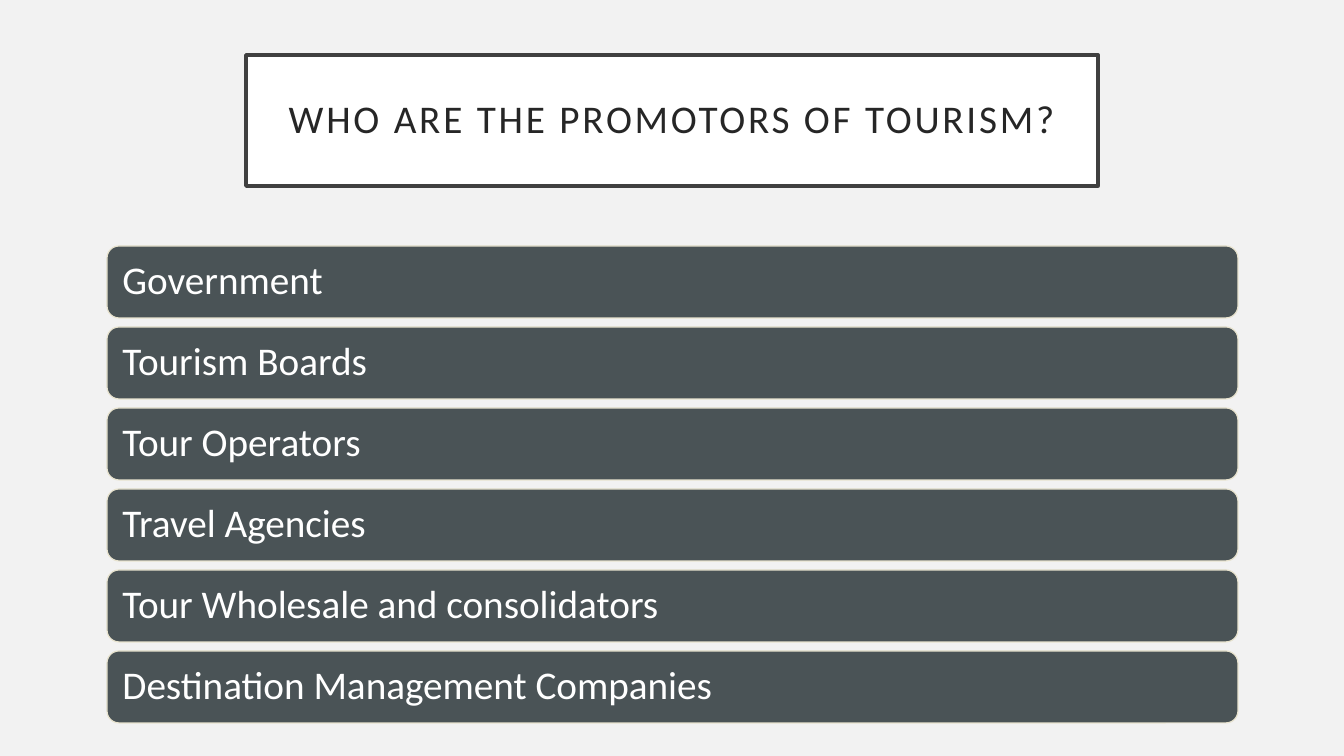
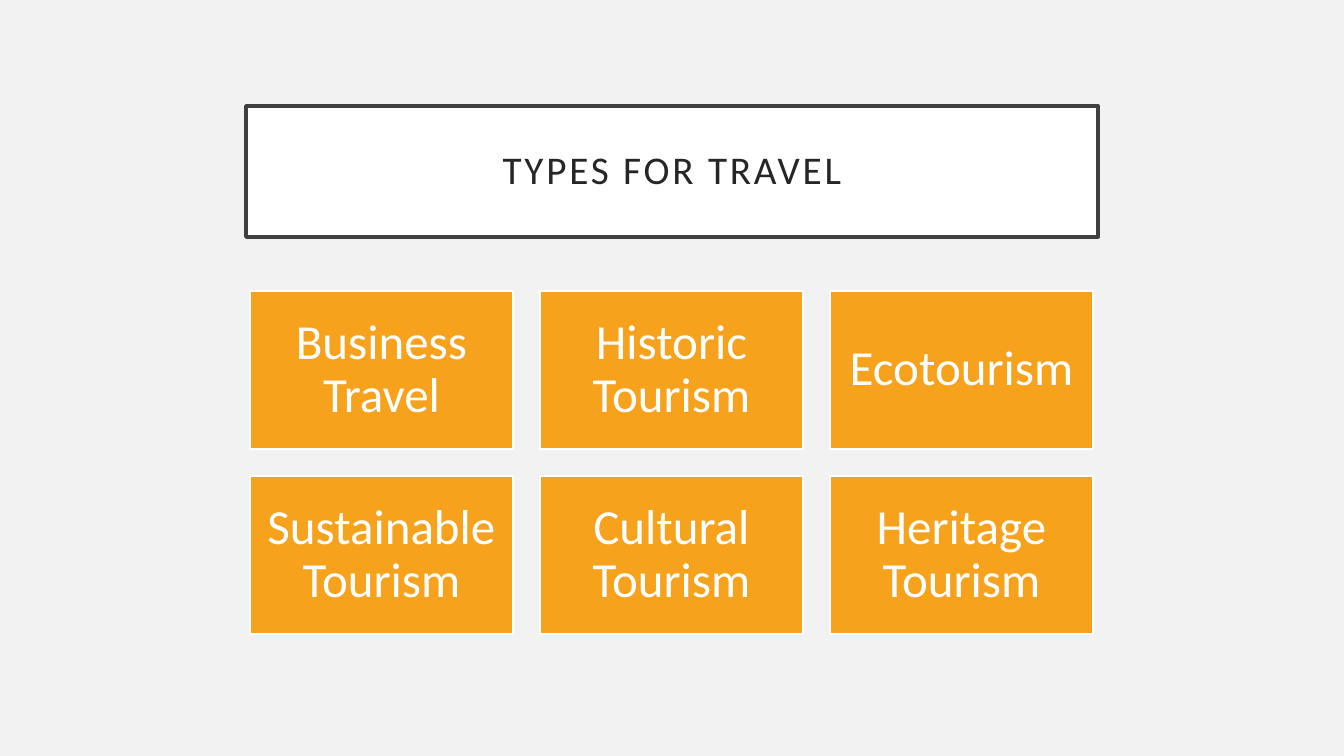
from pptx import Presentation
from pptx.dml.color import RGBColor
from pptx.enum.shapes import MSO_SHAPE
from pptx.enum.text import MSO_ANCHOR, PP_ALIGN
from pptx.util import Pt

RECTANGLE, ROUNDED = MSO_SHAPE.RECTANGLE, MSO_SHAPE.ROUNDED_RECTANGLE
LEFT, CENTER = PP_ALIGN.LEFT, PP_ALIGN.CENTER
MIDDLE = MSO_ANCHOR.MIDDLE

WIDTH, HEIGHT = 1344, 756
EMU_PER_PX = 12192000 / WIDTH
BLANK_LAYOUT = 6

FONT = "Calibri"
WHITE = "FFFFFF"
BACKGROUND = "F2F2F2"
TITLE_TEXT, TITLE_LINE = "262626", "404040"
SLATE, CREAM = "4A5356", "E8E3CE"
ORANGE = "F6A21D"

PROMOTORS = [
    "Government",
    "Tourism Boards",
    "Tour Operators",
    "Travel Agencies",
    "Tour Wholesale and consolidators",
    "Destination Management Companies",
]
TRAVEL_TYPES = [
    "Business Travel",
    "Historic Tourism",
    "Ecotourism",
    "Sustainable Tourism",
    "Cultural Tourism",
    "Heritage Tourism",
]


def px(length):
    return round(length * EMU_PER_PX)


def color(value):
    return RGBColor.from_string(value)


def write(shape, text, size=28, ink=WHITE, align=LEFT, inset=0, tracking=0):
    """Fill a shape with one paragraph; tracking is letter spacing in points."""
    frame = shape.text_frame
    frame.word_wrap = True
    frame.vertical_anchor = MIDDLE
    frame.margin_left = frame.margin_right = px(inset)
    frame.margin_top = frame.margin_bottom = px(inset)
    para = frame.paragraphs[0]
    para.alignment = align
    para.line_spacing = 0.9
    span = para.add_run()
    span.text = text
    span.font.name = FONT
    span.font.size = Pt(size)
    span.font.color.rgb = color(ink)
    if tracking:
        span._r.get_or_add_rPr().set("spc", str(tracking * 100))


class TourismDeck:
    def __init__(self):
        self.deck = Presentation()
        self.deck.slide_width = px(WIDTH)
        self.deck.slide_height = px(HEIGHT)
        self.page = None

    def add_page(self, title, title_top):
        layout = self.deck.slide_layouts[BLANK_LAYOUT]
        self.page = self.deck.slides.add_slide(layout)
        fill = self.page.background.fill
        fill.solid()
        fill.fore_color.rgb = color(BACKGROUND)
        box = self.box(RECTANGLE, 246, title_top, 852, 131, WHITE, TITLE_LINE, 2.5)
        write(box, title, ink=TITLE_TEXT, align=CENTER, inset=20, tracking=2)

    def box(self, kind, left, top, width, height, fill, line, weight=0.85):
        box = self.page.shapes.add_shape(
            kind, px(left), px(top), px(width), px(height))
        box.shadow.inherit = False
        box.fill.solid()
        box.fill.fore_color.rgb = color(fill)
        box.line.color.rgb = color(line)
        box.line.width = Pt(weight)
        return box

    def bars(self, labels, left=107, top=246, width=1131, height=72, gap=9):
        for row, label in enumerate(labels):
            bar_top = top + row * (height + gap)
            bar = self.box(ROUNDED, left, bar_top, width, height, SLATE, CREAM)
            write(bar, label, inset=12)

    def tiles(self, labels, columns=3, left=250, top=291, width=263, height=158, gap=27):
        for index, label in enumerate(labels):
            row, column = divmod(index, columns)
            tile = self.box(
                RECTANGLE, left + column * (width + gap), top + row * (height + gap),
                width, height, ORANGE, WHITE)
            write(tile, label, size=35, align=CENTER, inset=15)


def main():
    tourism = TourismDeck()
    tourism.add_page("WHO ARE THE PROMOTORS OF TOURISM?", title_top=55)
    tourism.bars(PROMOTORS)
    tourism.add_page("TYPES FOR TRAVEL", title_top=106)
    tourism.tiles(TRAVEL_TYPES)
    tourism.deck.save("out.pptx")


if __name__ == "__main__":
    main()
